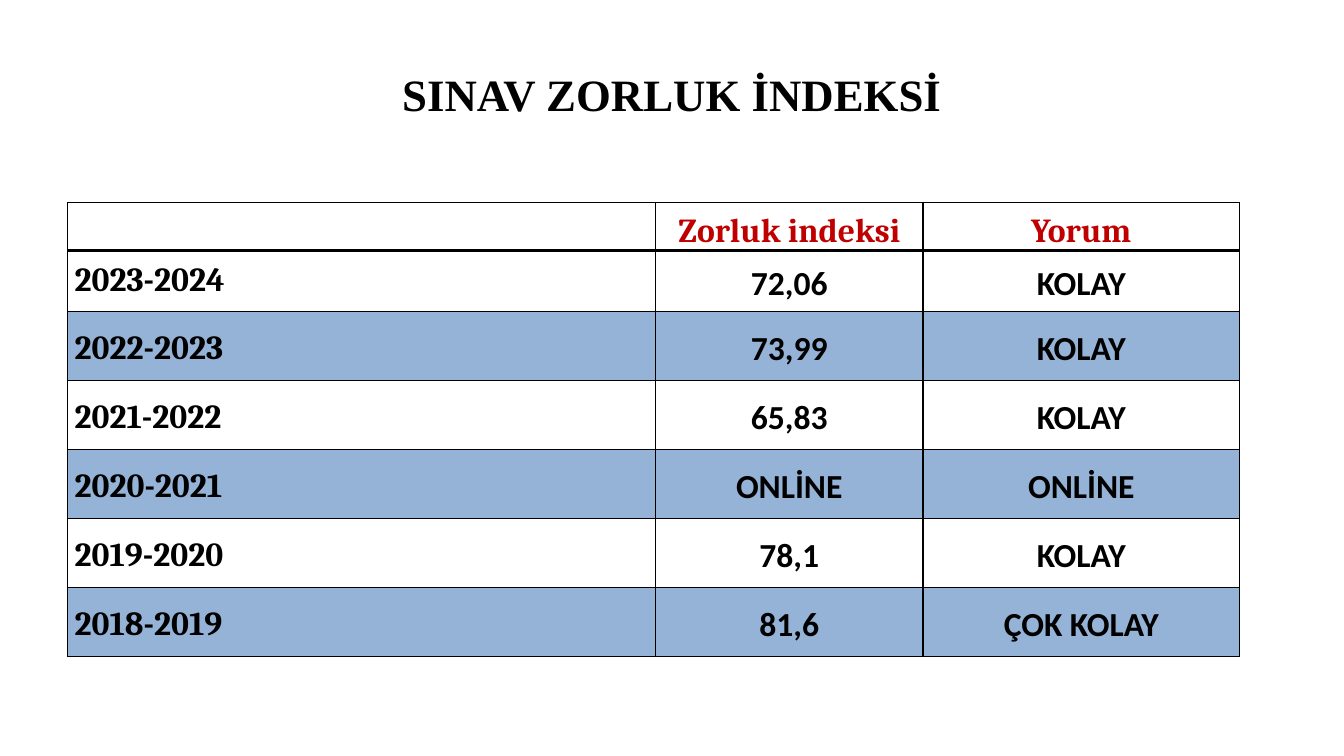
from dataclasses import dataclass

from lxml.etree import SubElement
from pptx import Presentation
from pptx.dml.color import RGBColor
from pptx.enum.text import MSO_ANCHOR, PP_ALIGN
from pptx.oxml.ns import qn
from pptx.table import _Cell
from pptx.text.text import _Paragraph
from pptx.util import Cm, Pt

BLACK = RGBColor(0x00, 0x00, 0x00)
RED = RGBColor(0xC0, 0x00, 0x00)
BLUE = RGBColor(0x95, 0xB3, 0xD7)

THIN, THICK = Pt(1), Pt(2.25)
COLUMN_WIDTHS = (14.82, 6.74, 7.98)
ROW_HEIGHTS = (1.22, 1.52) + (1.74,) * 5


@dataclass(frozen=True)
class ExamYear:
    period: str
    difficulty: str
    comment: str


HEADINGS = ("", "Zorluk indeksi", "Yorum")
EXAM_YEARS = (
    ExamYear("2023-2024", "72,06", "KOLAY"),
    ExamYear("2022-2023", "73,99", "KOLAY"),
    ExamYear("2021-2022", "65,83", "KOLAY"),
    ExamYear("2020-2021", "ONLİNE", "ONLİNE"),
    ExamYear("2019-2020", "78,1", "KOLAY"),
    ExamYear("2018-2019", "81,6", "ÇOK KOLAY"),
)


def style_paragraph(paragraph: _Paragraph, typeface: str, size: int,
                    color: RGBColor, align: PP_ALIGN) -> None:
    paragraph.alignment = align
    font = paragraph.font
    font.name = typeface
    font.size = Pt(size)
    font.bold = True
    font.color.rgb = color


def set_borders(cell: _Cell, top: int, bottom: int) -> None:
    properties = cell._tc.get_or_add_tcPr()
    widths = {"a:lnL": THIN, "a:lnR": THIN, "a:lnT": top, "a:lnB": bottom}
    for position, (side, width) in enumerate(widths.items()):
        border = SubElement(properties, qn(side), w=str(int(width)))
        fill = SubElement(border, qn("a:solidFill"))
        SubElement(fill, qn("a:srgbClr"), val=str(BLACK))
        properties.insert(position, border)


def fill_cell(cell: _Cell, text: str, row: int, column: int) -> None:
    is_heading = row == 0
    cell.text = text
    cell.margin_left = cell.margin_right = Cm(0.18)
    cell.margin_top = cell.margin_bottom = 0
    cell.vertical_anchor = MSO_ANCHOR.BOTTOM if is_heading else MSO_ANCHOR.MIDDLE
    if row >= 2 and row % 2 == 0:
        cell.fill.solid()
        cell.fill.fore_color.rgb = BLUE
    else:
        cell.fill.background()
    paragraph = cell.text_frame.paragraphs[0]
    style_paragraph(
        paragraph,
        "Cambria" if is_heading or column == 0 else "Calibri",
        24,
        RED if is_heading else BLACK,
        PP_ALIGN.LEFT if column == 0 else PP_ALIGN.CENTER,
    )
    if (row, column) != (1, 0):
        paragraph.line_spacing = 1.15
    set_borders(cell, THICK if row == 1 else THIN, THICK if is_heading else THIN)


def main() -> None:
    presentation = Presentation()
    presentation.slide_width = Cm(33.87)
    presentation.slide_height = Cm(19.05)
    slide = presentation.slides.add_slide(presentation.slide_layouts[6])

    title = slide.shapes.add_textbox(Cm(1.69), Cm(0.76), Cm(30.48), Cm(3.18)).text_frame
    title.word_wrap = True
    title.vertical_anchor = MSO_ANCHOR.MIDDLE
    title.text = "SINAV ZORLUK İNDEKSİ"
    style_paragraph(title.paragraphs[0], "Times New Roman", 32, BLACK, PP_ALIGN.CENTER)

    rows = [HEADINGS] + [(year.period, year.difficulty, year.comment)
                         for year in EXAM_YEARS]
    difficulty_table = slide.shapes.add_table(
        len(rows), len(HEADINGS), Cm(1.7), Cm(5.1),
        Cm(sum(COLUMN_WIDTHS)), Cm(sum(ROW_HEIGHTS)),
    ).table
    difficulty_table.first_row = False
    difficulty_table.horz_banding = False
    for column, width in zip(difficulty_table.columns, COLUMN_WIDTHS):
        column.width = Cm(width)
    for row, height in zip(difficulty_table.rows, ROW_HEIGHTS):
        row.height = Cm(height)
    for row_index, texts in enumerate(rows):
        for column_index, text in enumerate(texts):
            fill_cell(difficulty_table.cell(row_index, column_index),
                      text, row_index, column_index)

    presentation.save("out.pptx")


if __name__ == "__main__":
    main()
